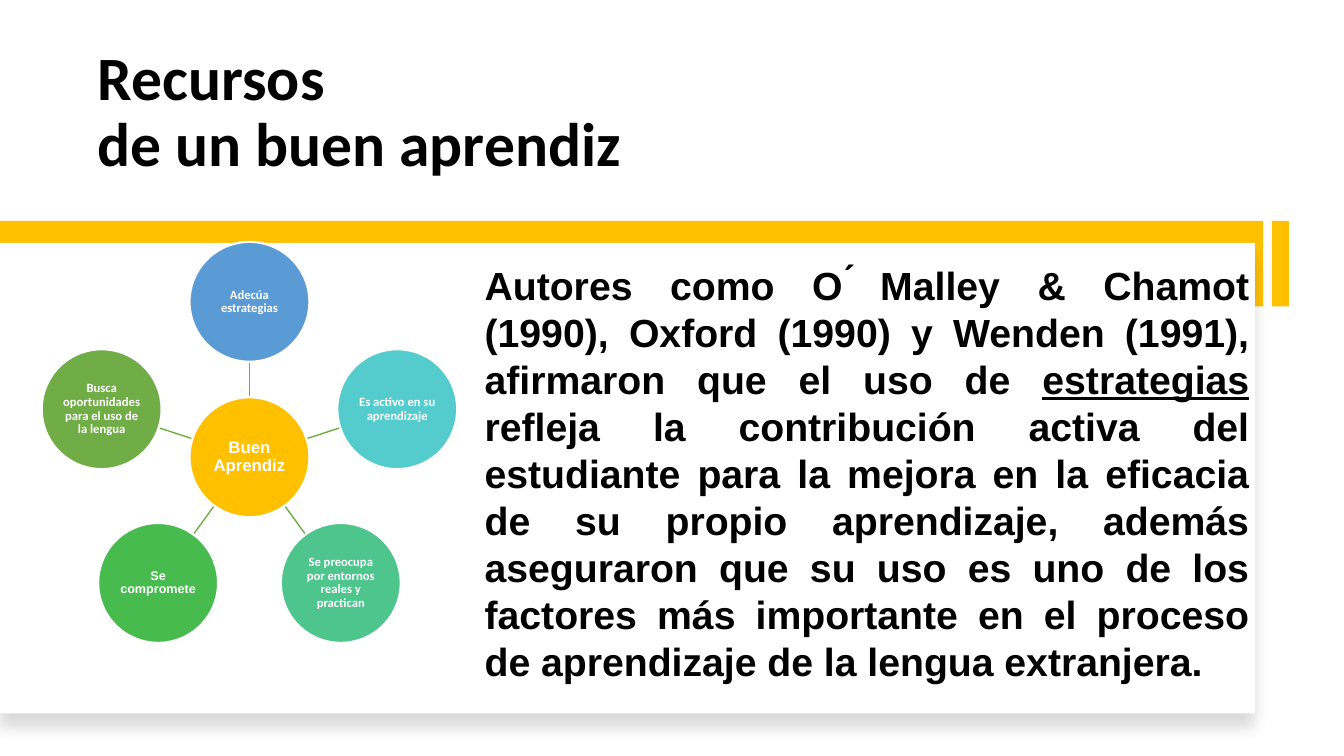
import math
import pptx
import pptx.util
import pptx.dml.color
import pptx.enum.shapes
import pptx.enum.text
import pptx.oxml
import pptx.oxml.ns
import lxml.etree

Pt = pptx.util.Pt
MSO = pptx.enum.shapes.MSO_SHAPE
ALIGN = pptx.enum.text.PP_ALIGN
ANCHOR = pptx.enum.text.MSO_ANCHOR
COLORS = {
    "black": "000000", "white": "FFFFFF", "gold": "FFC000", "blue": "5B9BD5",
    "cyan": "54CCCD", "teal": "4DC58D", "green": "48BB4F", "olive": "70AD47",
}


def rgb(name):
    return pptx.dml.color.RGBColor.from_string(COLORS[name])


def add_run(p, text, font, size, color):
    r = p.add_run()
    r.text = text
    r.font.name = font
    r.font.size = Pt(size)
    r.font.bold = True
    r.font.color.rgb = rgb(color)
    return r


prs = pptx.Presentation()
prs.slide_width = Pt(960)
prs.slide_height = Pt(540)
s = prs.slides.add_slide(prs.slide_layouts[5])

title = s.shapes.title
title.left, title.top, title.width, title.height = Pt(62.6), Pt(30.2), Pt(792.7), Pt(102.2)
tf = title.text_frame
tf.word_wrap = True
tf.auto_size = pptx.enum.text.MSO_AUTO_SIZE.NONE
tf.vertical_anchor = ANCHOR.BOTTOM
p = tf.paragraphs[0]
p.alignment = ALIGN.LEFT
p.line_spacing = 0.9
add_run(p, "Recursos", "Calibri", 44, "black")
p.add_line_break()
add_run(p, "de un buen aprendiz", "Calibri", 44, "black")

panels = [
    ("gold", 0, 157.7, 902.2, 61.2),
    ("white", 0, 173.5, 896.4, 336.2),
    ("gold", 908.6, 157.7, 12.2, 61.2),
]
for color, x, y, w, h in panels:
    sp = s.shapes.add_shape(MSO.RECTANGLE, Pt(x), Pt(y), Pt(w), Pt(h))
    sp.shadow.inherit = False
    sp.fill.solid()
    sp.fill.fore_color.rgb = rgb(color)
    sp.line.fill.background()
    if color == "white":
        effects = sp._element.spPr.find(pptx.oxml.ns.qn("a:effectLst"))
        shadow = lxml.etree.SubElement(
            effects, pptx.oxml.ns.qn("a:outerShdw"),
            blurRad=str(Pt(11)), dist=str(Pt(10)), dir="5400000", algn="t", rotWithShape="0")
        tint = lxml.etree.SubElement(shadow, pptx.oxml.ns.qn("a:srgbClr"), val=COLORS["black"])
        lxml.etree.SubElement(tint, pptx.oxml.ns.qn("a:alpha"), val="15000")

body = s.shapes.add_textbox(Pt(339.1), Pt(182.9), Pt(560.2), Pt(312.5))
tf = body.text_frame
tf.word_wrap = True
p = tf.paragraphs[0]
p.alignment = ALIGN.JUSTIFY
p.space_after = Pt(6)
sentence = [
    ("Autores como O ́Malley & Chamot (1990), Oxford (1990) y Wenden (1991), afirmaron que el uso de ", False),
    ("estrategias", True),
    (" refleja la contribución activa del estudiante para la mejora en la eficacia de su propio "
     "aprendizaje, además aseguraron que su uso es uno de los factores más importante en el proceso "
     "de aprendizaje de la lengua extranjera.", False),
]
for text, underline in sentence:
    add_run(p, text, "Arial", 28, "black").font.underline = underline

hub_x, hub_y = 178.2, 326.6
diameter, orbit = 85.6, 111
line_start, line_end = 42.8, 68.2
circles = [("Buen Aprendiz", "Arial", 12, "gold", hub_x, hub_y)]
resources = [
    ("Adecúa estrategias", "Calibri", "blue"),
    ("Es activo en su aprendizaje", "Calibri", "cyan"),
    ("Se preocupa por entornos reales y practican", "Calibri", "teal"),
    ("Se compromete", "Arial", "green"),
    ("Busca oportunidades para el uso de la lengua", "Calibri", "olive"),
]
for i, (text, font, color) in enumerate(resources):
    angle = 2 * math.pi * i / len(resources)
    dx, dy = math.sin(angle), -math.cos(angle)
    circles.append((text, font, 9, color, hub_x + orbit * dx, hub_y + orbit * dy))
    spoke = s.shapes.add_connector(
        pptx.enum.shapes.MSO_CONNECTOR.STRAIGHT,
        Pt(hub_x + line_start * dx), Pt(hub_y + line_start * dy),
        Pt(hub_x + line_end * dx), Pt(hub_y + line_end * dy))
    spoke.line.color.rgb = rgb("olive")
    spoke.line.width = Pt(1)
    lxml.etree.SubElement(spoke._element.spPr, pptx.oxml.ns.qn("a:effectLst"))

for text, font, size, color, x, y in circles:
    sp = s.shapes.add_shape(
        MSO.OVAL, Pt(x - diameter / 2), Pt(y - diameter / 2), Pt(diameter), Pt(diameter))
    sp.shadow.inherit = False
    sp.fill.solid()
    sp.fill.fore_color.rgb = rgb(color)
    sp.line.color.rgb = rgb("white")
    sp.line.width = Pt(1.5)
    tf = sp.text_frame
    tf.word_wrap = True
    tf.vertical_anchor = ANCHOR.MIDDLE
    tf.margin_left = tf.margin_right = tf.margin_top = tf.margin_bottom = Pt(0.7)
    p = tf.paragraphs[0]
    p.alignment = ALIGN.CENTER
    p.line_spacing = 0.9
    add_run(p, text, font, size, "white")

prs.save("out.pptx")
